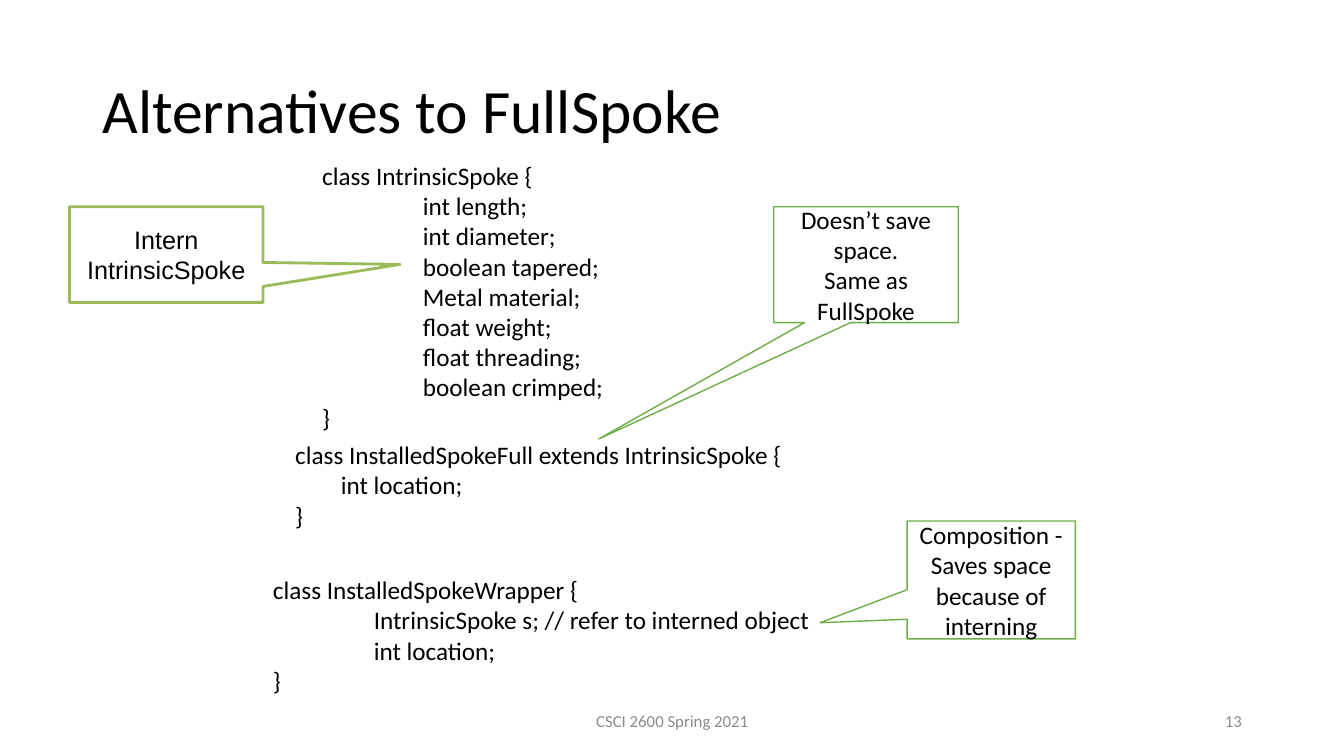
import pptx
import pptx.util
import pptx.dml.color
import pptx.enum.shapes
import pptx.enum.text
import pptx.oxml
import pptx.oxml.ns

Cm, Pt = pptx.util.Cm, pptx.util.Pt
RGBColor = pptx.dml.color.RGBColor
ALIGN = pptx.enum.text.PP_ALIGN
MIDDLE = pptx.enum.text.MSO_ANCHOR.MIDDLE
CALLOUT = pptx.enum.shapes.MSO_SHAPE.RECTANGULAR_CALLOUT

BLACK = RGBColor(0, 0, 0)
WHITE = RGBColor(255, 255, 255)
GRAY = RGBColor(0x8B, 0x8B, 0x8B)
GREEN = RGBColor(0x70, 0xAD, 0x47)
OLIVE = RGBColor(0x9B, 0xBB, 0x59)

# Content: places are left, top, width, height in cm
TITLE = "Alternatives to FullSpoke"
TITLE_BOX = (2.33, 1.02, 29.21, 3.68)

# Code blocks: place, tab stop in cm, lines
CODE = [
    ((7.87, 3.91, 7.8, 7.87), 2.54, [
        "class IntrinsicSpoke {",
        "\tint length;",
        "\tint diameter;",
        "\tboolean tapered;",
        "\tMetal material;",
        "\tfloat weight;",
        "\tfloat threading;",
        "\tboolean crimped;",
        "}",
    ]),
    ((7.19, 10.95, 14.02, 4.06), 1.15, [
        "class InstalledSpokeFull extends IntrinsicSpoke {",
        "\tint location;",
        "}",
    ]),
    ((6.63, 14.35, 16.51, 3.3), 2.54, [
        "class InstalledSpokeWrapper {",
        "\tIntrinsicSpoke s; // refer to interned object",
        "\tint location;",
        "}",
    ]),
]

# Callouts: place, pointer tip, line colour, line width, font, lines
CALLOUTS = [
    ((19.5, 5.21, 4.65, 2.92), (-1.448, 1.504), GREEN, 1, "Calibri",
     ["Doesn’t save space.", "Same as FullSpoke"]),
    ((22.86, 13.13, 4.24, 2.97), (-1.017, 0.363), GREEN, 1, "Calibri",
     ["Composition -", "Saves space because of interning"]),
    ((1.75, 5.21, 4.88, 2.41), (1.208, 0.103), OLIVE, 2, "Arial",
     ["Intern IntrinsicSpoke"]),
]

FOOTERS = [
    ((11.23, 17.65, 11.43, 1.02), ALIGN.CENTER, "CSCI 2600 Spring 2021"),
    ((23.93, 17.65, 7.62, 1.02), ALIGN.RIGHT, "13"),
]


def write(sp, lines, align=ALIGN.LEFT, size=18, color=BLACK, font="Calibri", **frame):
    """Fill a shape with one paragraph per line."""
    tf = sp.text_frame
    for name, value in {"word_wrap": True, **frame}.items():
        setattr(tf, name, value)
    for i, line in enumerate(lines):
        p = tf.add_paragraph() if i else tf.paragraphs[0]
        p.alignment = align
        r = p.add_run()
        r.text = line
        for name, value in {"name": font, "size": Pt(size)}.items():
            setattr(r.font, name, value)
        r.font.color.rgb = color
    return tf


def set_tab(p, stop):
    tabs = pptx.oxml.parse_xml(
        f'<a:tabLst {pptx.oxml.ns.nsdecls("a")}>'
        f'<a:tab pos="{Cm(stop)}" algn="l"/></a:tabLst>')
    p._p.get_or_add_pPr().append(tabs)


prs = pptx.Presentation()
prs.slide_width, prs.slide_height = Cm(33.87), Cm(19.05)
s = prs.slides.add_slide(prs.slide_layouts[5])

# Title
title = s.shapes.title
for name, value in zip(("left", "top", "width", "height"), TITLE_BOX):
    setattr(title, name, Cm(value))
write(title, [TITLE], size=44, vertical_anchor=MIDDLE)
title.text_frame.paragraphs[0].line_spacing = 0.9

# Code blocks
for box, stop, lines in CODE:
    sp = s.shapes.add_textbox(*map(Cm, box))
    for p in write(sp, lines).paragraphs:
        set_tab(p, stop)

# Callouts
for box, tip, color, width, font, lines in CALLOUTS:
    sp = s.shapes.add_shape(CALLOUT, *map(Cm, box))
    sp.shadow.inherit = False
    sp.adjustments[0], sp.adjustments[1] = tip
    sp.fill.solid()
    sp.fill.fore_color.rgb = WHITE
    sp.line.color.rgb = color
    sp.line.width = Pt(width)
    write(sp, lines, ALIGN.CENTER, font=font, vertical_anchor=MIDDLE)

# Footer and slide number
for box, align, text in FOOTERS:
    sp = s.shapes.add_textbox(*map(Cm, box))
    write(sp, [text], align, 12, GRAY, vertical_anchor=MIDDLE)

prs.save("out.pptx")
